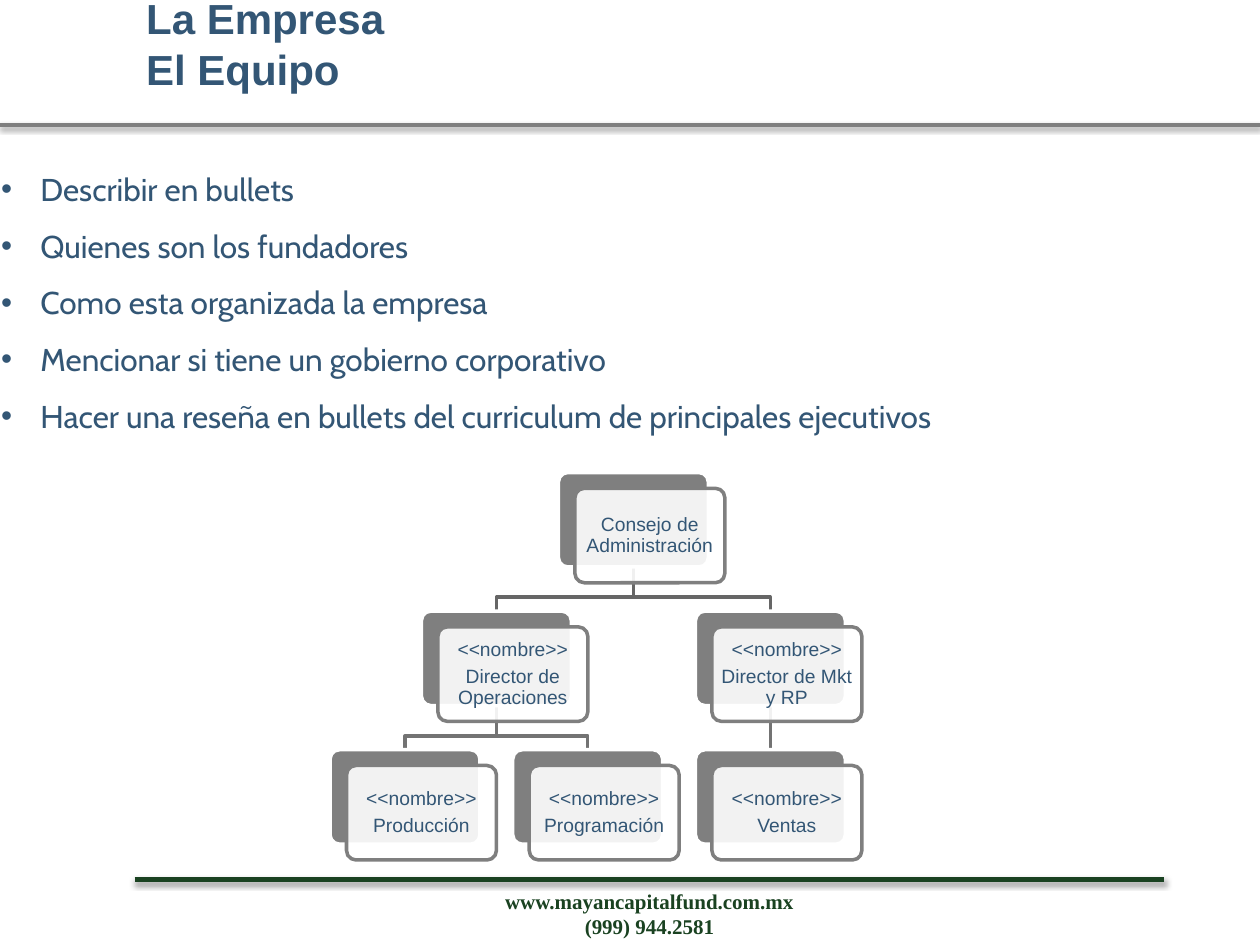
from dataclasses import dataclass

from lxml import etree
from pptx import Presentation
from pptx import util as u
from pptx.dml.color import RGBColor
from pptx.enum import shapes, text
from pptx.oxml.ns import qn

Pt = u.Pt


@dataclass(frozen=True)
class Theme:
    ink: str = "335675"
    grey: str = "7F7F7F"
    white: str = "FFFFFF"
    green: str = "1A4221"
    upper_link: str = "666666"
    lower_link: str = "737373"
    heading: str = "Arial"
    body: str = "Cabin"
    contact: str = "Times New Roman"
    title_size: int = 24
    body_size: int = 18
    contact_size: int = 12
    node_size: int = 11


class Board:
    """Holds the style and the slide being drawn."""

    def __init__(self, slide, theme):
        self.slide, self.theme = slide, theme

    def run(self, paragraph, words, font, size, color, bold=False):
        run = paragraph.add_run()
        run.text = words
        run.font.name, run.font.size, run.font.bold = font, Pt(size), bold
        run.font.color.rgb = RGBColor.from_string(color)

    def paragraphs(self, frame, lines):
        for i, line in enumerate(lines):
            yield (frame.add_paragraph() if i else frame.paragraphs[0]), line

    def stroke(self, shape, color, width=2):
        shape.line.color.rgb = RGBColor.from_string(color)
        shape.line.width = Pt(width)

    def title(self, lines, box):
        t, holder = self.theme, self.slide.shapes.title
        holder.left, holder.top, holder.width, holder.height = map(Pt, box)
        frame = holder.text_frame
        frame.auto_size = text.MSO_AUTO_SIZE.NONE
        frame.vertical_anchor = text.MSO_ANCHOR.MIDDLE
        heading = frame.paragraphs[0]
        heading.alignment = text.PP_ALIGN.LEFT
        for i, line in enumerate(lines):
            if i:
                heading.add_line_break()
            self.run(heading, line, t.heading, t.title_size, t.ink, True)

    def connector(self, start, end, color, width):
        line = self.slide.shapes.add_connector(
            shapes.MSO_CONNECTOR.STRAIGHT, *map(Pt, (*start, *end)))
        self.stroke(line, color, width)
        etree.SubElement(line._element.spPr, qn("a:effectLst"))
        return line

    def rule(self, left, right, y, color, width, distance, opacity):
        line = self.connector((left, y), (right, y), color, width)
        effects = line._element.spPr.find(qn("a:effectLst"))
        shadow = etree.SubElement(
            effects, qn("a:outerShdw"), blurRad=str(Pt(3.1)),
            dist=str(Pt(distance)), dir="5400000", rotWithShape="0")
        black = etree.SubElement(shadow, qn("a:srgbClr"), val="000000")
        etree.SubElement(black, qn("a:alpha"), val=str(opacity * 1000))

    def elbow(self, points, color):
        first, *rest = [(Pt(x), Pt(y)) for x, y in points]
        builder = self.slide.shapes.build_freeform(*first)
        builder.add_line_segments(rest, close=False)
        link = builder.convert_to_shape()
        link.shadow.inherit = False
        link.fill.background()
        self.stroke(link, color)

    def card(self, x, y, width, height, fill, line):
        card = self.slide.shapes.add_shape(
            shapes.MSO_SHAPE.ROUNDED_RECTANGLE, *map(Pt, (x, y, width, height)))
        card.adjustments[0] = 0.1
        card.shadow.inherit = False
        card.fill.solid()
        card.fill.fore_color.rgb = RGBColor.from_string(fill)
        self.stroke(card, line)
        return card

    def node(self, x, y, width, height, lines):
        """Solid card with a translucent label card in front of it."""
        t = self.theme
        back = self.card(x, y, width, height, t.grey, t.white)
        front = self.card(x + 9.4, y + 9, width, height, t.white, t.grey)
        color = front._element.spPr.find(qn("a:solidFill")).find(qn("a:srgbClr"))
        etree.SubElement(color, qn("a:alpha"), val="90000")
        frame = front.text_frame
        frame.word_wrap = True
        frame.vertical_anchor = text.MSO_ANCHOR.MIDDLE
        frame.margin_left = frame.margin_right = Pt(3.6)
        frame.margin_top = frame.margin_bottom = Pt(3.6)
        for p, line in self.paragraphs(frame, lines):
            p.alignment = text.PP_ALIGN.CENTER
            p.line_spacing = 0.9
            p.space_after = Pt(4)
            self.run(p, line, t.heading, t.node_size, t.ink)
        return back

    def text_box(self, box, wrap):
        frame = self.slide.shapes.add_textbox(*map(Pt, box)).text_frame
        frame.word_wrap = wrap
        frame.auto_size = text.MSO_AUTO_SIZE.SHAPE_TO_FIT_TEXT
        return frame

    def bullets(self, lines, box):
        t = self.theme
        for p, line in self.paragraphs(self.text_box(box, True), lines):
            props = p._p.get_or_add_pPr()
            props.set("marL", str(Pt(22.5)))
            props.set("indent", str(-Pt(22.5)))
            etree.SubElement(props, qn("a:buFont"), typeface="Arial")
            etree.SubElement(props, qn("a:buChar"), char="•")
            p.alignment = text.PP_ALIGN.JUSTIFY
            p.line_spacing = 1.5
            self.run(p, line, t.body, t.body_size, t.ink)

    def contact(self, lines, box):
        t = self.theme
        for p, line in self.paragraphs(self.text_box(box, False), lines):
            p.alignment = text.PP_ALIGN.CENTER
            self.run(p, line, t.contact, t.contact_size, t.green, True)


def organization(board):
    theme = board.theme
    width, height, drop = 85.7, 54, 17.3
    column, row, left, top = 104.4, 79.2, 188.6, 270
    name = "<<nombre>>"
    # Key: (column, level); each parent is centred over its children
    people = {
        (1.25, 0): ["Consejo de Administración"],
        (0.5, 1): [name, "Director de Operaciones"],
        (0, 2): [name, "Producción"],
        (1, 2): [name, "Programación"],
        (2, 1): [name, "Director de Mkt y RP"],
        (2, 2): [name, "Ventas"],
    }
    reports = [((2, 1), (2, 2)), ((1.25, 0), (2, 1)), ((0.5, 1), (1, 2)),
               ((0.5, 1), (0, 2)), ((1.25, 0), (0.5, 1))]

    def corner(place):
        return left + place[0] * column, top + place[1] * row

    # Reporting lines lie behind the cards
    straight = []
    for boss, report in reports:
        color = theme.lower_link if boss[1] else theme.upper_link
        (x1, y1), (x2, y2) = corner(boss), corner(report)
        x1, x2, y1 = x1 + width / 2, x2 + width / 2, y1 + height
        if boss[0] == report[0]:
            link = board.connector((x1, y1), (x2, y2), color, 2)
            straight.append((link, boss, report))
        else:
            bend = y1 + drop
            board.elbow([(x1, y1), (x1, bend), (x2, bend), (x2, y2)], color)

    cards = {place: board.node(*corner(place), width, height, lines)
             for place, lines in people.items()}
    for link, boss, report in straight:
        link.begin_connect(cards[boss], 2)
        link.end_connect(cards[report], 0)


def main():
    deck = Presentation()
    deck.slide_width, deck.slide_height = Pt(720), Pt(540)
    theme = Theme()
    board = Board(deck.slides.add_slide(deck.slide_layouts[5]), theme)

    # Header and footer
    board.rule(0, 720, 71.3, theme.grey, 2, 1.6, 38)
    board.rule(77, 665.3, 502.6, theme.green, 3, 1.8, 35)
    board.contact(["www.mayancapitalfund.com.mx", "(999) 944.2581"],
                  (280.8, 504, 180.7, 36))
    board.title(["La Empresa", "El Equipo"], (76.3, -2.2, 527.8, 54))

    # Organization chart and guidance
    organization(board)
    board.bullets([
        "Describir en bullets",
        "Quienes son los fundadores",
        "Como esta organizada la empresa",
        "Mencionar si tiene un gobierno corporativo",
        "Hacer una reseña en bullets del curriculum de principales ejecutivos",
    ], (-6.5, 82.8, 726.5, 170.6))

    deck.save("out.pptx")


if __name__ == "__main__":
    main()
